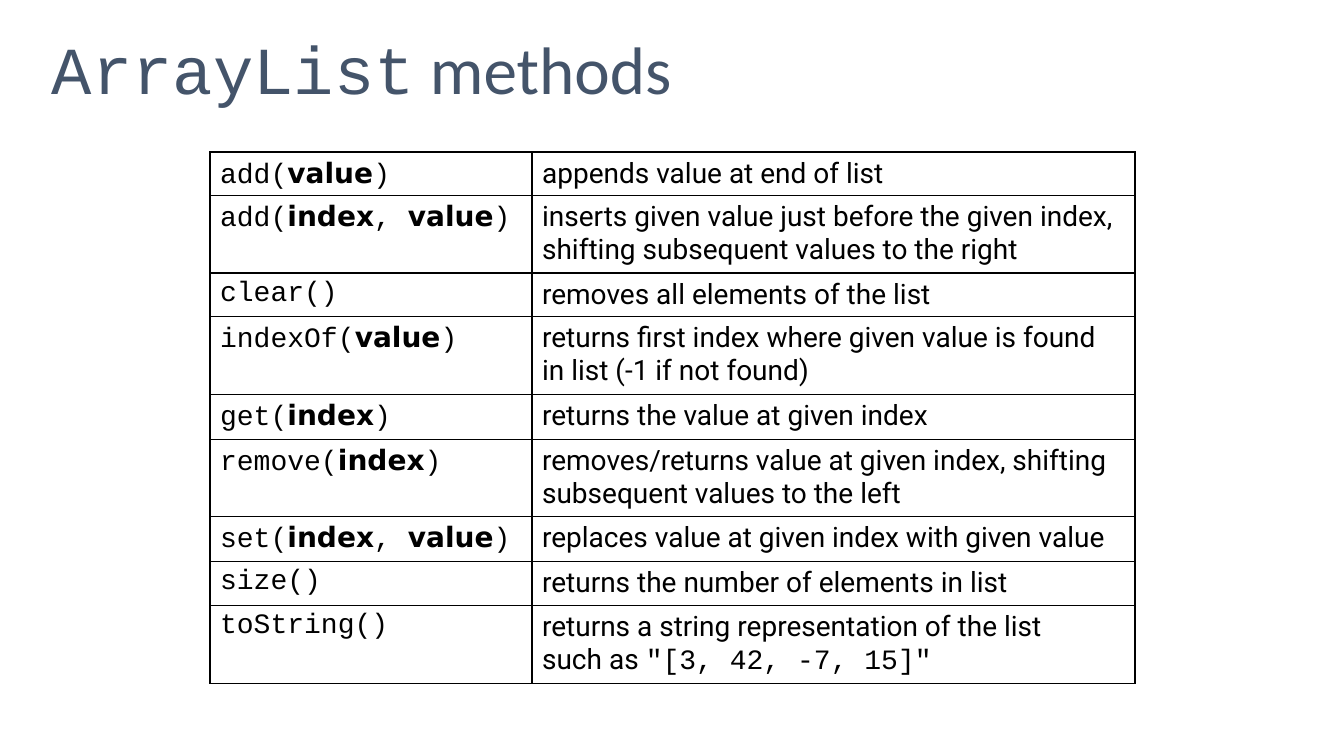
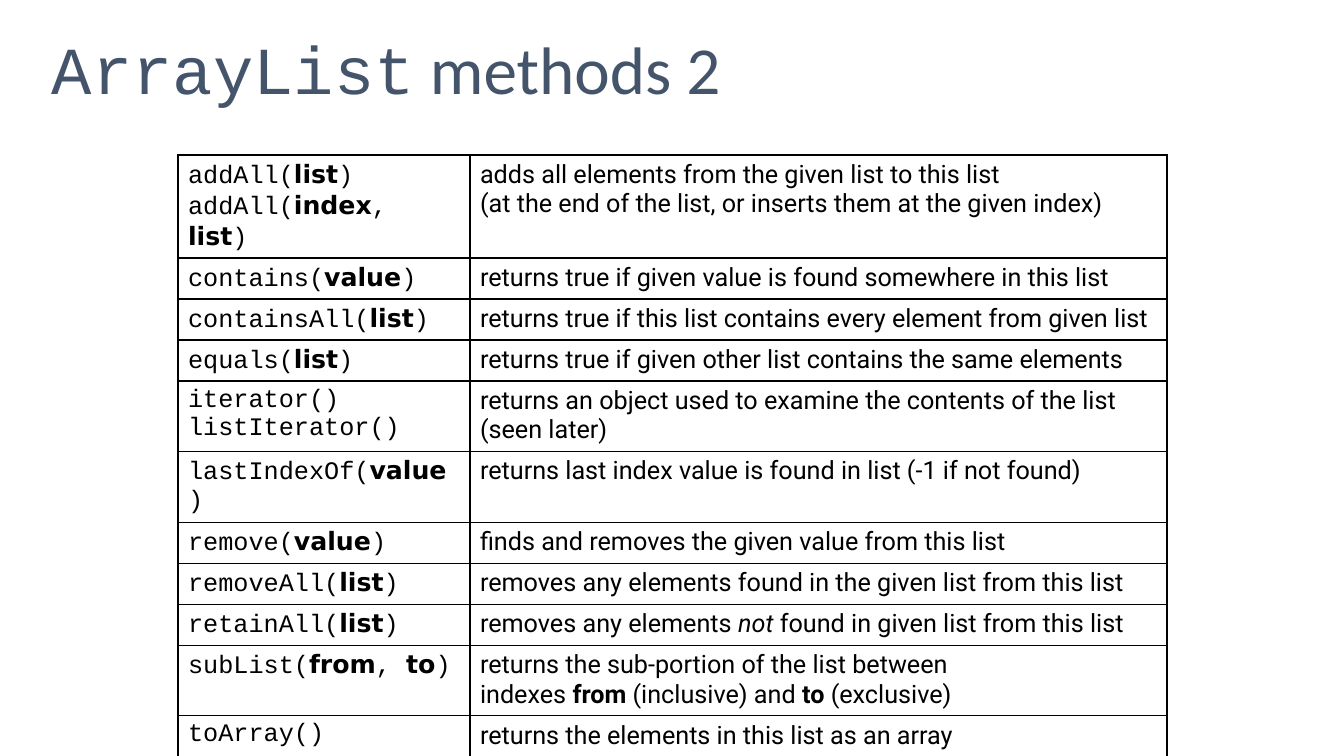
from dataclasses import dataclass
from lxml.etree import SubElement
from pptx import Presentation
from pptx.dml.color import RGBColor
from pptx.enum.text import MSO_ANCHOR
from pptx.oxml.ns import qn
from pptx.util import Pt

WIDE, HIGH = 1344, 756
UNIT = 12192000 / WIDE


@dataclass(frozen=True)
class Theme:
    ink: str = "000000"
    head: str = "44546A"
    title: int = 48
    large: int = 20
    small: int = 18
    rule: int = 1


THEME = Theme()
STYLES = {
    "code": {"name": "Courier New", "bold": False},
    "arg": {"name": "DejaVu Sans", "bold": True},
    "body": {"name": "Roboto"},
    "bold": {"name": "Roboto", "bold": True},
    "slant": {"name": "Roboto", "italic": True},
    "head": {"name": "Calibri"},
}

BASIC = [
    (43, "add(value)", ["appends value at end of list"]),
    (76, "add(index, value)", ["inserts given value just before the given index, shifting subsequent values to the right"]),
    (43, "clear()", ["removes all elements of the list"]),
    (76, "indexOf(value)", ["returns first index where given value is found in list (-1 if not found)"]),
    (45, "get(index)", ["returns the value at given index"]),
    (76, "remove(index)", ["removes/returns value at given index, shifting subsequent values to the left"]),
    (45, "set(index, value)", ["replaces value at given index with given value"]),
    (43, "size()", ["returns the number of elements in list"]),
    (78, "toString()", [
        "returns a string representation of the list",
        [("body", "such as "), ("code", '"[3, 42, -7, 15]"')],
    ]),
]

MORE = [
    (103, "addAll(list)\naddAll(index, list)", [
        "adds all elements from the given list to this list",
        "(at the end of the list, or inserts them at the given index)",
    ]),
    (41, "contains(value)", ["returns true if given value is found somewhere in this list"]),
    (41, "containsAll(list)", ["returns true if this list contains every element from given list"]),
    (41, "equals(list)", ["returns true if given other list contains the same elements"]),
    (69, "iterator()\nlistIterator()", ["returns an object used to examine the contents of the list (seen later)"]),
    (70, "lastIndexOf(value)", ["returns last index value is found in list (-1 if not found)"]),
    (41, "remove(value)", ["finds and removes the given value from this list"]),
    (41, "removeAll(list)", ["removes any elements found in the given list from this list"]),
    (41, "retainAll(list)", [[
        ("body", "removes any elements "), ("slant", "not"),
        ("body", " found in given list from this list"),
    ]]),
    (69, "subList(from, to)", [[
        ("body", "returns the sub-portion of the list between"), ("break", ""),
        ("body", "indexes "), ("bold", "from"), ("body", " (inclusive) and "),
        ("bold", "to"), ("body", " (exclusive)"),
    ]]),
    (40, "toArray()", ["returns the elements in this list as an array"]),
]


def px(count):
    return round(count * UNIT)


def add_run(para, kind, text, size, color):
    if kind == "break":
        para.add_line_break()
        return
    run = para.add_run()
    run.text = text
    for key, value in {"size": Pt(size), **STYLES[kind]}.items():
        setattr(run.font, key, value)
    run.font.color.rgb = RGBColor.from_string(color)


def write(frame, lines, size, color):
    for num, line in enumerate(lines):
        para = frame.add_paragraph() if num else frame.paragraphs[0]
        runs = [("body", line)] if isinstance(line, str) else line
        for kind, text in runs:
            add_run(para, kind, text, size, color)


def split_call(call):
    name, _, rest = call.partition("(")
    args = rest.rstrip(")")
    if not args:
        return [("code", call)]
    runs = [("code", name + "(")]
    for num, arg in enumerate(args.split(", ")):
        if num:
            runs.append(("code", ", "))
        runs.append(("arg", arg))
    return runs + [("code", ")")]


def add_title(slide, text):
    box = slide.shapes.add_textbox(px(42), 0, px(1260), px(146))
    frame = box.text_frame
    for key, value in {"word_wrap": True, "vertical_anchor": MSO_ANCHOR.MIDDLE}.items():
        setattr(frame, key, value)
    write(frame, [[("code", "ArrayList"), ("head", text)]], THEME.title, THEME.head)
    frame.paragraphs[0].line_spacing = 0.9


def style_cell(cell):
    props = cell._tc.get_or_add_tcPr()
    for side in ("lnL", "lnR", "lnT", "lnB"):
        line = SubElement(props, qn("a:" + side), w=str(Pt(THEME.rule)))
        fill = SubElement(line, qn("a:solidFill"))
        SubElement(fill, qn("a:srgbClr"), val=THEME.ink)
    cell.fill.background()


def add_grid(slide, left, top, cols, rows, size):
    high = sum(row[0] for row in rows)
    table = slide.shapes.add_table(
        len(rows), len(cols), px(left), px(top), px(sum(cols)), px(high)
    ).table
    for key, value in {"first_row": False, "horz_banding": False}.items():
        setattr(table, key, value)
    for col, wide in zip(table.columns, cols):
        col.width = px(wide)
    for num, (tall, calls, notes) in enumerate(rows):
        table.rows[num].height = px(tall)
        sides = ([split_call(call) for call in calls.split("\n")], notes)
        for cell, lines in zip(table.rows[num].cells, sides):
            style_cell(cell)
            write(cell.text_frame, lines, size, THEME.ink)


def main():
    deck = Presentation()
    deck.slide_width, deck.slide_height = px(WIDE), px(HIGH)
    pages = [
        (" methods", 210, 152, (322, 603), BASIC, THEME.large),
        (" methods 2", 178, 155, (292, 697), MORE, THEME.small),
    ]
    for title, *grid in pages:
        slide = deck.slides.add_slide(deck.slide_layouts[6])
        add_title(slide, title)
        add_grid(slide, *grid)
    deck.save("out.pptx")


if __name__ == "__main__":
    main()
